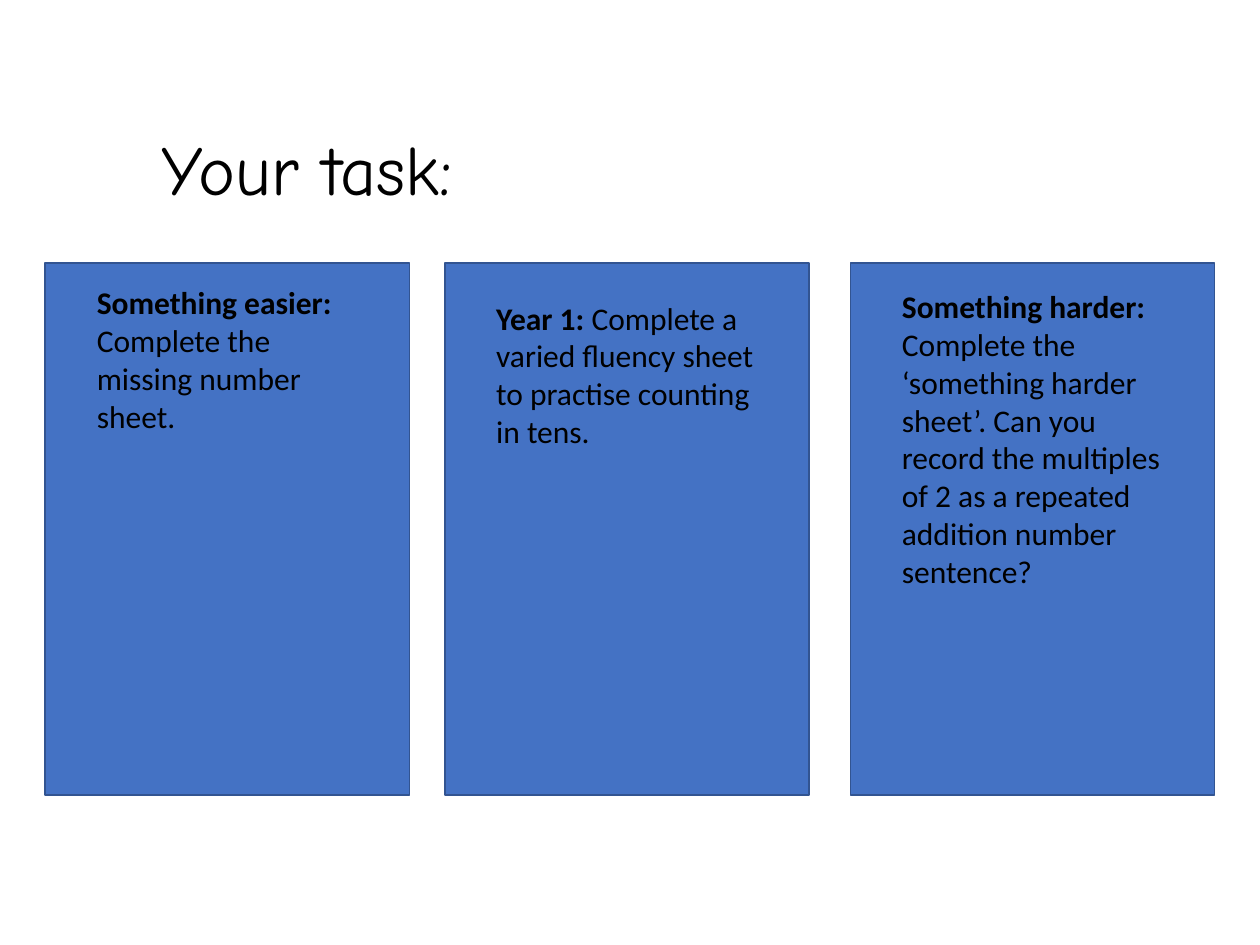
from pptx import Presentation
from pptx.dml.color import RGBColor
from pptx.enum.shapes import MSO_SHAPE
from pptx.enum.text import MSO_ANCHOR, MSO_AUTO_SIZE, PP_ALIGN
from pptx.util import Inches, Pt

RECTANGLE = MSO_SHAPE.RECTANGLE
TOP = MSO_ANCHOR.TOP
LEFT = PP_ALIGN.LEFT
NO_AUTOFIT = MSO_AUTO_SIZE.NONE
TITLE_ONLY = 5

COLOURS = {"panel": "4472C4", "outline": "325491", "text": "000000"}


def write_text(shape, runs, font="Calibri", size=18, colour="text"):
    """Fill a shape with one paragraph of (text, bold) runs."""
    frame = shape.text_frame
    frame.word_wrap = True
    frame.auto_size = NO_AUTOFIT
    frame.vertical_anchor = TOP
    frame.margin_left = frame.margin_right = Inches(0.1)
    frame.margin_top = frame.margin_bottom = Inches(0.05)
    paragraph = frame.paragraphs[0]
    paragraph.alignment = LEFT
    for text, bold in runs:
        run = paragraph.add_run()
        run.text = text
        run.font.name = font
        run.font.size = Pt(size)
        run.font.bold = bold
        run.font.color.rgb = RGBColor.from_string(COLOURS[colour])


presentation = Presentation()
presentation.slide_width = Inches(10)
presentation.slide_height = Inches(7.5)
slide = presentation.slides.add_slide(presentation.slide_layouts[TITLE_ONLY])

# Title
title = slide.shapes.title
title.left, title.top = Inches(1.18), Inches(0.95)
title.width, title.height = Inches(5.33), Inches(0.77)
write_text(title, [("Your task:", False)], font="Comic Neue", size=40)

# Task columns: panel left, text top, text height, heading, instruction
panel_top, panel_width, panel_height = 2.09, 2.89, 4.22
text_width = 2.27
text_inset = (panel_width - text_width) / 2
tasks = [
    (0.36, 2.2, 1.31, "Something easier: ",
     "Complete the missing number sheet."),
    (3.53, 2.32, 1.31, "Year 1: ",
     "Complete a varied fluency sheet to practise counting in tens."),
    (6.75, 2.23, 2.52, "Something harder: ",
     "Complete the ‘something harder sheet’. Can you record the multiples "
     "of 2 as a repeated addition number sentence?"),
]
for panel_left, text_top, text_height, heading, instruction in tasks:
    panel = slide.shapes.add_shape(
        RECTANGLE, Inches(panel_left), Inches(panel_top),
        Inches(panel_width), Inches(panel_height))
    panel.shadow.inherit = False
    panel.fill.solid()
    panel.fill.fore_color.rgb = RGBColor.from_string(COLOURS["panel"])
    panel.line.color.rgb = RGBColor.from_string(COLOURS["outline"])
    panel.line.width = Pt(1)

    text_box = slide.shapes.add_textbox(
        Inches(panel_left + text_inset), Inches(text_top),
        Inches(text_width), Inches(text_height))
    write_text(text_box, [(heading, True), (instruction, False)])

presentation.save("out.pptx")
